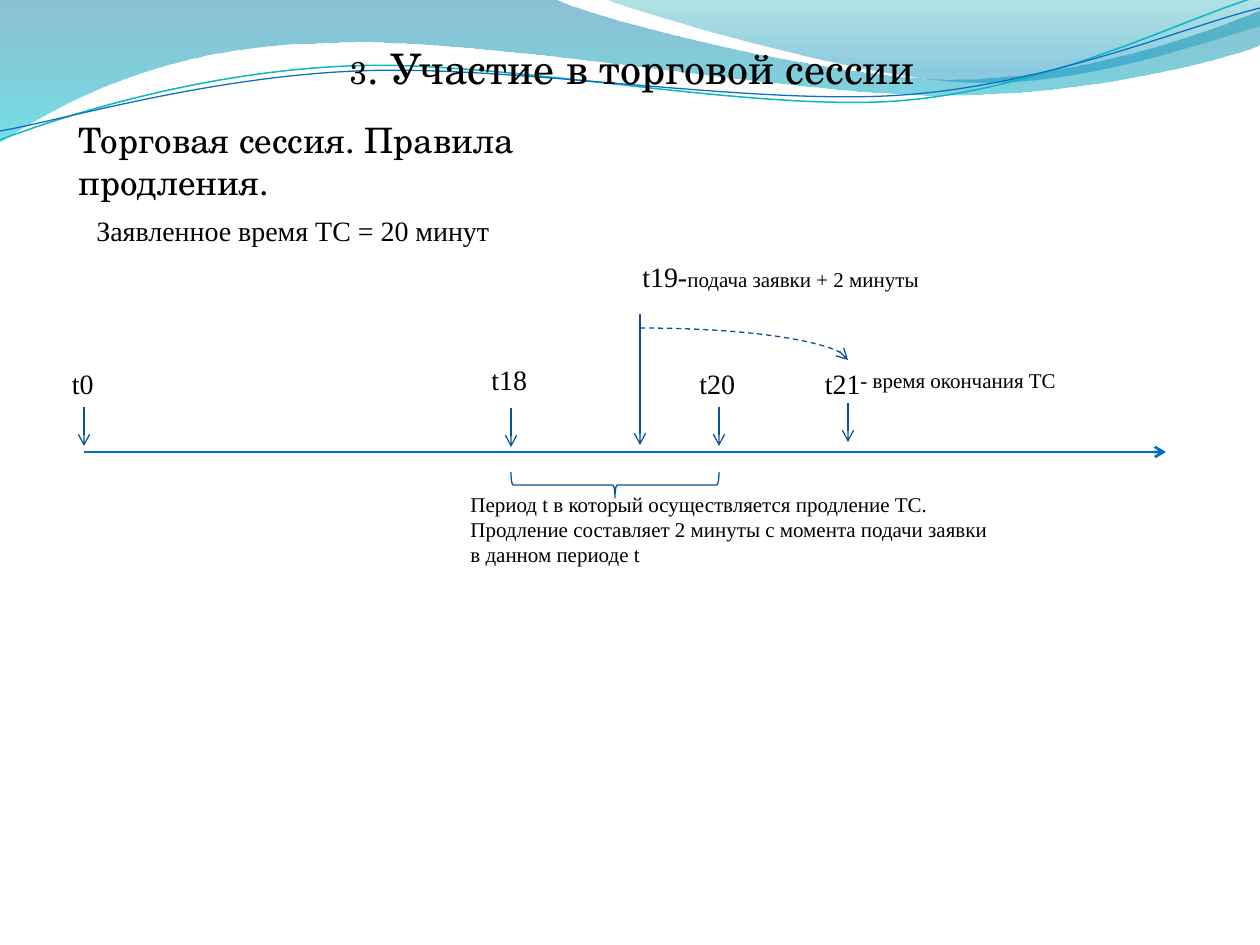
"""Build the trading-session extension slide: a wave header above a timeline."""
import math
from pptx import Presentation
from pptx import util as u
from pptx.dml.color import RGBColor
from pptx.enum import dml, shapes, text
from pptx.oxml import ns
from lxml import etree

PX = 914400 / 126
THEME = {
    "ink": "000000", "axis": "0070C0", "mark": "095295",
    "head_font": "TeX Gyre Schola", "body_font": "Times New Roman",
    "title": 24, "number": 18, "heading": 20, "label": 16, "note": 12,
    "thin": 0.75, "thick": 1.5,
}

WAVES = [
    {"points": [(0, 0), (554, -1), (600, 21, 837, 79, 955, 79),
                (1075, 79, 1207, 33, 1260, 11), (1261, 45),
                (1239, 55, 1096, 96, 940, 95), (784, 95, 481, 35, 324, 43),
                (163, 45, 58, 105, -1, 142), (0, 0)],
     "stops": [(0, "0074A1", 45), (1, "00C6CF", 55)]},
    {"points": [(604, -1), (641, 14, 859, 78, 969, 82),
                (1079, 87, 1211, 40, 1260, 26), (1260, 0), (604, -1)],
     "stops": [(0, "00A1A9", 30), (0.8, "008BBF", 45)]},
    {"points": [(0, 140), (60, 117, 199, 72, 349, 66),
                (498, 59, 747, 112, 898, 101), (1050, 89, 1182, 19, 1257, -3)],
     "line": ("0AB8BF", 0.85), "pivot": (629, 72)},
    {"points": [(0, 131), (59, 121, 207, 77, 357, 71),
                (508, 64, 752, 106, 903, 95), (1053, 84, 1186, 26, 1260, 8)],
     "line": ("0F6FC6", 0.75), "pivot": (629, 74)},
]
TILT = 2.7

TITLE = [[("3", "number"), (". Участие в торговой сессии", "title")]]
TEXTS = [
    ((66, 112, 653, 55), "head_font", True,
     [[("Торговая сессия. Правила продления.", "heading")]]),
    ((84, 207, 446, 47), "body_font", True,
     [[("Заявленное время ТС = 20 минут", "label")]]),
    ((630, 253, 338, 47), "body_font", True,
     [[("t19-", "label"), ("подача заявки + 2 минуты", "note")]]),
    ((848, 361, 223, 38), "body_font", False, [[("- время окончания ТС", "note")]]),
    ((458, 485, 549, 115), "body_font", False, [
        [("Период t в который осуществляется продление ТС.", "note")],
        [("Продление составляет 2 минуты с момента подачи заявки", "note")],
        [("в данном периоде t", "note")]]),
]
AXIS = (84, 452, 1166, 452)
MARKS = {"t0": (84, 407, 446), "t18": (511, 408, 447), "t19": (640, 314, 445),
         "t20": (719, 407, 446), "t21": (848, 403, 442)}
LABELS = {"t0": (49, 360), "t18": (64, 356), "t20": (64, 360), "t21": (71, 360)}
LABEL_H = 47
SHIFT = (640, 328, 848, 360)
BRACE_TOP, BRACE_H = 472, 26


def px(*values):
    return [u.Emu(round(v * PX)) for v in values]


def rgb(name):
    return RGBColor.from_string(THEME.get(name, name))


def turn(point, pivot):
    """Turn a point clockwise about the pivot by the tilt angle."""
    dx, dy = point[0] - pivot[0], point[1] - pivot[1]
    c, s = math.cos(math.radians(TILT)), math.sin(math.radians(TILT))
    return pivot[0] + dx * c - dy * s, pivot[1] + dx * s + dy * c


def add_wave(s, points, stops=None, line=None, pivot=None):
    path = [seg[i:i + 2] for seg in points for i in range(0, len(seg), 2)]
    if pivot:
        path = [turn(p, pivot) for p in path]
    path = [px(*p) for p in path]
    builder = s.shapes.build_freeform(*path[0], scale=1.0)
    builder.add_line_segments(path[1:], close=bool(stops))
    sp = builder.convert_to_shape()
    sp.shadow.inherit = False
    steps = iter(list(sp.element.iter(ns.qn("a:lnTo"))))
    for seg in points[1:]:
        group = [next(steps) for _ in range(len(seg) // 2)]
        if len(group) == 3:
            curve = etree.Element(ns.qn("a:cubicBezTo"))
            group[0].addprevious(curve)
            for step in group:
                curve.append(step[0])
                step.getparent().remove(step)
    if line:
        sp.rotation = 360 - TILT
        sp.fill.background()
        sp.line.color.rgb, sp.line.width = rgb(line[0]), u.Pt(line[1])
        return
    sp.line.fill.background()
    sp.fill.gradient()
    sp.fill.gradient_angle = 270
    for stop, (position, colour, _) in zip(sp.fill.gradient_stops, stops):
        stop.position, stop.color.rgb = position, rgb(colour)
    for clr, (_, _, opacity) in zip(sp.element.spPr.iter(ns.qn("a:srgbClr")), stops):
        etree.SubElement(clr, ns.qn("a:alpha"), val=str(opacity * 1000))


def add_text(s, box, font, wrap, paragraphs, align=text.PP_ALIGN.LEFT):
    sp = s.shapes.add_textbox(*px(*box))
    tf = sp.text_frame
    tf.word_wrap = wrap
    tf.auto_size = text.MSO_AUTO_SIZE.SHAPE_TO_FIT_TEXT
    for i, runs in enumerate(paragraphs):
        p = tf.add_paragraph() if i else tf.paragraphs[0]
        p.alignment = align
        for content, size in runs:
            r = p.add_run()
            r.text = content
            r.font.name, r.font.size = THEME[font], u.Pt(THEME[size])
            r.font.color.rgb = rgb("ink")
    return sp


def add_arrow(s, ends, colour="mark", width="thin", curved=False):
    kind = shapes.MSO_CONNECTOR.CURVE if curved else shapes.MSO_CONNECTOR.STRAIGHT
    sp = s.shapes.add_connector(kind, *px(*ends))
    sp.line.color.rgb, sp.line.width = rgb(colour), u.Pt(THEME[width])
    spPr = sp._element.spPr
    if curved:
        sp.line.dash_style = dml.MSO_LINE.DASH
        spPr.find(ns.qn("a:prstGeom")).set("prst", "curvedConnector2")
    etree.SubElement(spPr.find(ns.qn("a:ln")), ns.qn("a:tailEnd"), type="arrow")
    etree.SubElement(spPr, ns.qn("a:effectLst"))
    return sp


def add_brace(s, left, right):
    span, cx, cy = right - left, (left + right) / 2, BRACE_TOP + BRACE_H / 2
    sp = s.shapes.add_shape(shapes.MSO_SHAPE.LEFT_BRACE,
                            *px(cx - BRACE_H / 2, cy - span / 2, BRACE_H, span))
    sp.rotation = 270
    sp.shadow.inherit = False
    sp.fill.background()
    sp.line.color.rgb, sp.line.width = rgb("mark"), u.Pt(THEME["thin"])


def main():
    prs = Presentation()
    prs.slide_width, prs.slide_height = px(1260, 945)
    s = prs.slides.add_slide(prs.slide_layouts[6])
    for wave in WAVES:
        add_wave(s, **wave)
    add_arrow(s, AXIS, "axis", "thick")
    for box, font, wrap, paragraphs in TEXTS:
        add_text(s, box, font, wrap, paragraphs)
    for name, (x, top, bottom) in MARKS.items():
        arrow = add_arrow(s, (x, top, x, bottom))
        if name in LABELS:
            width, y = LABELS[name]
            label = add_text(s, (x - width / 2, y, width, LABEL_H), "body_font", True,
                             [[(name, "label")]])
            if y + LABEL_H == top:
                arrow.begin_connect(label, 2)
    add_brace(s, MARKS["t18"][0], MARKS["t20"][0])
    add_arrow(s, SHIFT, curved=True)
    add_text(s, (64, 36, 1137, 102), "head_font", True, TITLE, text.PP_ALIGN.CENTER)
    prs.save("out.pptx")


if __name__ == "__main__":
    main()
